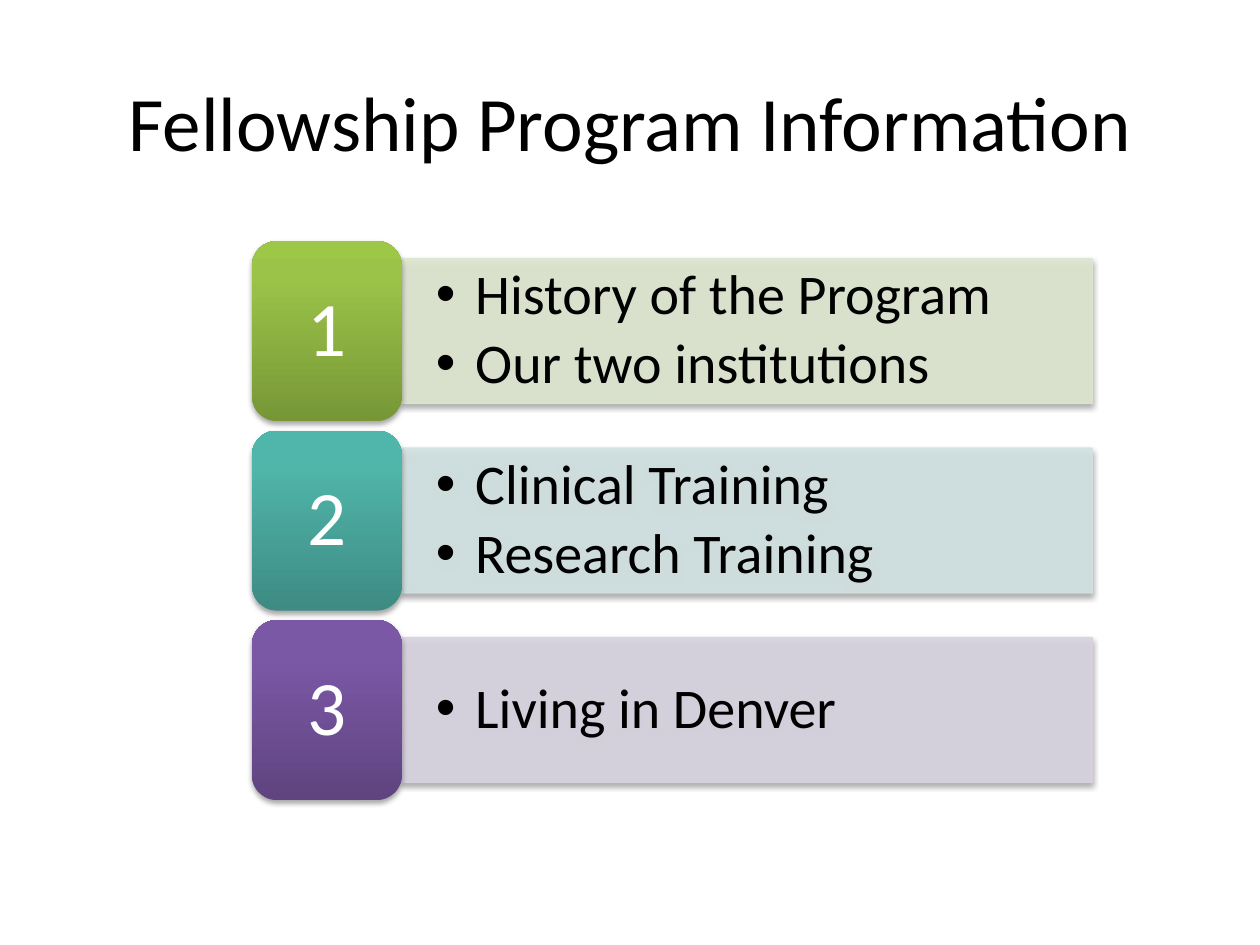
from lxml.etree import SubElement
from pptx import Presentation
from pptx.dml.color import RGBColor
from pptx.enum.shapes import MSO_SHAPE
from pptx.enum.text import MSO_ANCHOR, PP_ALIGN
from pptx.oxml.ns import qn
from pptx.util import Cm, Pt

BLACK = RGBColor(0x00, 0x00, 0x00)
WHITE = RGBColor(0xFF, 0xFF, 0xFF)
FONT = "Calibri"

TITLE = "Fellowship Program Information"
# Topics, bar colour, block gradient from bottom to top
SECTIONS = [
    (["History of the Program", "Our two institutions"],
     RGBColor(0xDE, 0xE7, 0xD1), ["779737", "9BC348", "9DC746"]),
    (["Clinical Training", "Research Training"],
     RGBColor(0xD2, 0xE3, 0xE2), ["3D8B83", "50B5AA", "4EB8AC"]),
    (["Living in Denver"],
     RGBColor(0xD8, 0xD3, 0xE0), ["5F4480", "7B58A6", "7C57A8"]),
]
GRADIENT_POSITIONS = [0, 80, 100]

BLOCK_LEFT, BLOCK_TOP = Cm(5.08), Cm(4.86)
BLOCK_WIDTH, BLOCK_HEIGHT = Cm(3.02), Cm(3.63)
BAR_WIDTH, BAR_HEIGHT = Cm(13.92), Cm(2.92)
ROW_PITCH = Cm(3.82)
BULLET_INDENT = Cm(0.79)


def add_bullet(paragraph):
    properties = paragraph._p.get_or_add_pPr()
    properties.set("marL", str(BULLET_INDENT))
    properties.set("indent", str(-BULLET_INDENT))
    SubElement(properties, qn("a:buFont"), typeface="Arial")
    SubElement(properties, qn("a:buChar"), char="•")


def write_text(shape, lines, size, color=BLACK, align=PP_ALIGN.LEFT, bullets=False,
               line_spacing=0.9, gap=Pt(0), margins=None):
    frame = shape.text_frame
    frame.word_wrap = True
    frame.vertical_anchor = MSO_ANCHOR.MIDDLE
    if margins:
        frame.margin_left = frame.margin_right = margins[0]
        frame.margin_top = frame.margin_bottom = margins[1]
    for index, line in enumerate(lines):
        paragraph = frame.paragraphs[0] if index == 0 else frame.add_paragraph()
        paragraph.text = line
        paragraph.alignment = align
        paragraph.line_spacing = line_spacing
        paragraph.space_before = gap if index else Pt(0)
        if bullets:
            add_bullet(paragraph)
        paragraph.font.name = FONT
        paragraph.font.size = Pt(size)
        paragraph.font.color.rgb = color


def add_shadow(shape):
    shape.shadow.inherit = False
    effects = shape._element.spPr.find(qn("a:effectLst"))
    shadow = SubElement(effects, qn("a:outerShdw"), blurRad=str(Pt(3.1)),
                        dist=str(Pt(1.8)), dir="5400000", rotWithShape="0")
    color = SubElement(shadow, qn("a:srgbClr"), val="000000")
    SubElement(color, qn("a:alpha"), val="35000")


def add_bar(slide, left, top, color):
    bar = slide.shapes.add_shape(MSO_SHAPE.RECTANGLE, left, top, BAR_WIDTH, BAR_HEIGHT)
    bar.fill.solid()
    bar.fill.fore_color.rgb = color
    bar.line.color.rgb = color
    bar.line.width = Pt(0.75)
    for color_element in bar._element.spPr.iter(qn("a:srgbClr")):
        SubElement(color_element, qn("a:alpha"), val="90000")
    add_shadow(bar)
    return bar


def add_block(slide, left, top, colors):
    block = slide.shapes.add_shape(MSO_SHAPE.ROUNDED_RECTANGLE, left, top,
                                   BLOCK_WIDTH, BLOCK_HEIGHT)
    block.fill.gradient()
    block.fill.gradient_angle = 90
    stops = next(block._element.spPr.iter(qn("a:gsLst")))
    stops.clear()
    for position, color in zip(GRADIENT_POSITIONS, colors):
        stop = SubElement(stops, qn("a:gs"), pos=str(position * 1000))
        SubElement(stop, qn("a:srgbClr"), val=color)
    block.line.fill.background()
    add_shadow(block)
    return block


def main():
    presentation = Presentation()
    presentation.slide_width, presentation.slide_height = Cm(25.4), Cm(19.05)
    slide = presentation.slides.add_slide(presentation.slide_layouts[5])

    title = slide.shapes.title
    title.left, title.top, title.width, title.height = Cm(2.34), Cm(0.84), Cm(22.43), Cm(3.18)
    write_text(title, [TITLE], 44, line_spacing=1.0)

    for row, (topics, bar_color, block_colors) in enumerate(SECTIONS):
        top = BLOCK_TOP + row * ROW_PITCH
        bar_top = top + (BLOCK_HEIGHT - BAR_HEIGHT) // 2
        bar = add_bar(slide, BLOCK_LEFT + BLOCK_WIDTH, bar_top, bar_color)
        write_text(bar, topics, 32, bullets=True, gap=Pt(4.8), margins=(Cm(0.69), Cm(0.35)))
        block = add_block(slide, BLOCK_LEFT, top, block_colors)
        write_text(block, [str(row + 1)], 44, color=WHITE, align=PP_ALIGN.CENTER,
                   margins=(Cm(0.6), Cm(0.37)))

    presentation.save("out.pptx")


if __name__ == "__main__":
    main()
